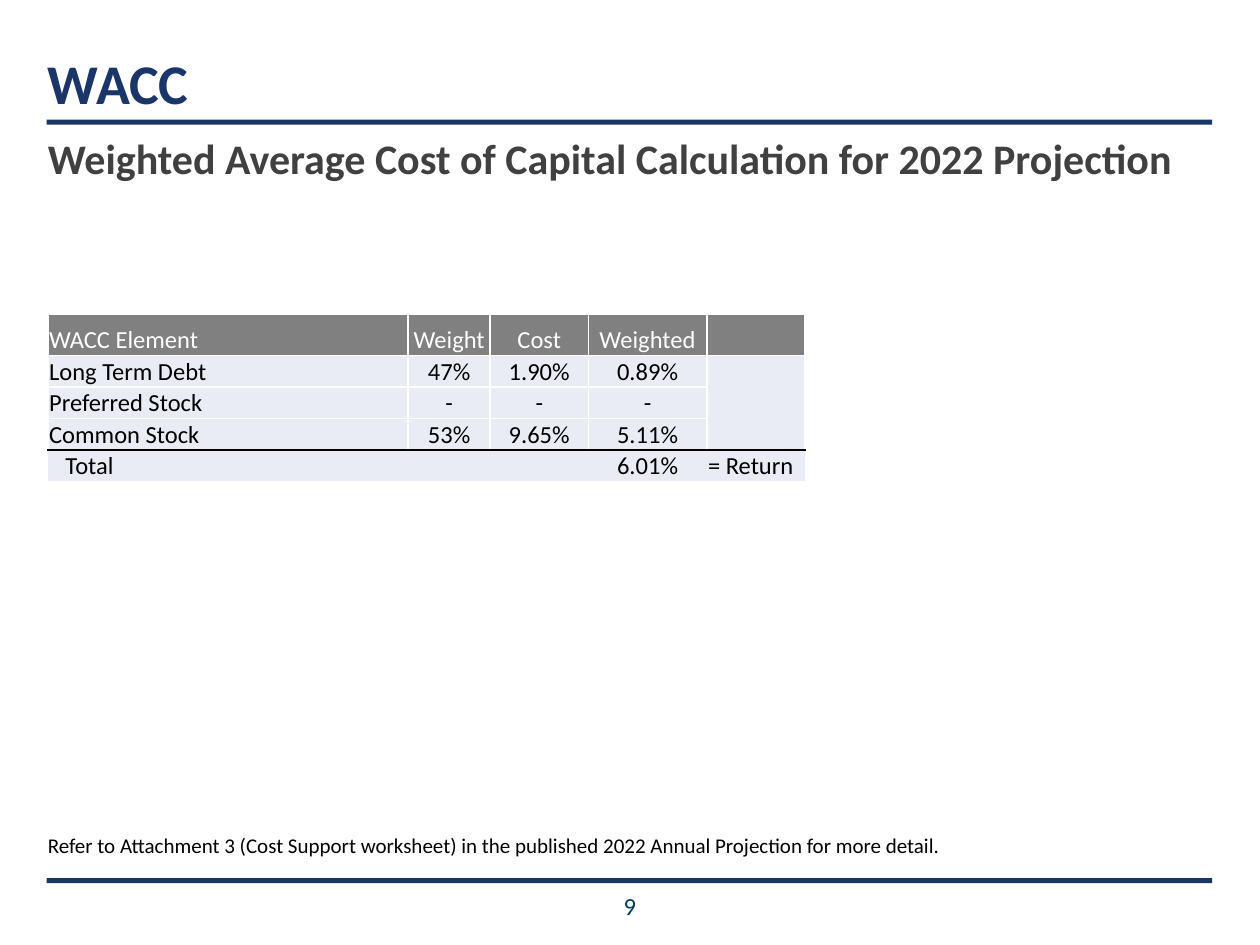
"""Build the WACC slide with its weighted average cost of capital table."""
from lxml import etree
from pptx import Presentation
from pptx import util as u
from pptx.dml.color import RGBColor
from pptx.enum import shapes, text
from pptx.oxml.ns import qn

NAVY, GREY, BLACK, WHITE = "1A3567", "808080", "000000", "FFFFFF"
LEFT, CENTER = text.PP_ALIGN.LEFT, text.PP_ALIGN.CENTER


def style(para, size, color, align=LEFT, bold=False):
    para.alignment = align
    for span in para.runs:
        span.font.name = "Calibri"
        span.font.size = u.Pt(size)
        span.font.bold = bold
        span.font.color.rgb = RGBColor.from_string(color)


def set_border(cell, side, color):
    line = etree.SubElement(cell._tc.get_or_add_tcPr(), qn(f"a:ln{side}"), w=str(u.Pt(1)))
    if color is None:
        etree.SubElement(line, qn("a:noFill"))
    else:
        fill = etree.SubElement(line, qn("a:solidFill"))
        etree.SubElement(fill, qn("a:srgbClr"), val=color)


deck = Presentation()
deck.slide_width, deck.slide_height = u.Inches(10), u.Inches(7.5)
page = deck.slides.add_slide(deck.slide_layouts[6])

for top in (0.95, 6.97):
    rule = page.shapes.add_shape(
        shapes.MSO_SHAPE.RECTANGLE, u.Inches(0.37), u.Inches(top), u.Inches(9.25), u.Inches(0.04))
    rule.shadow.inherit = False
    rule.fill.solid()
    rule.fill.fore_color.rgb = RGBColor.from_string(NAVY)
    rule.line.fill.background()

TOP, BOTTOM = text.MSO_ANCHOR.TOP, text.MSO_ANCHOR.BOTTOM
labels = [
    ("9", (0, 7.07, 10, 0.25), TOP, (14, "003B5C", CENTER)),
    ("WACC", (0.38, 0.22, 9.25, 0.7), BOTTOM, (32, NAVY, LEFT, True)),
    ("Weighted Average Cost of Capital Calculation for 2022 Projection",
     (0.38, 1.05, 9.25, 0.5), TOP, (24, "404040", text.PP_ALIGN.JUSTIFY, True)),
    ("Refer to Attachment 3 (Cost Support worksheet) in the published 2022 Annual "
     "Projection for more detail.", (0.38, 6.61, 9.04, 0.34), TOP, (12, BLACK)),
]
for words, place, anchor, look in labels:
    box = page.shapes.add_textbox(*map(u.Inches, place))
    frame = box.text_frame
    frame.word_wrap = True
    frame.vertical_anchor = anchor
    frame.margin_left = frame.margin_right = frame.margin_top = frame.margin_bottom = 0
    frame.text = words
    style(frame.paragraphs[0], *look)

rows = [
    ("WACC Element", "Weight", "Cost", "Weighted", ""),
    ("Long Term Debt", "47%", "1.90%", "0.89%", ""),
    ("Preferred Stock", "-", "-", "-", ""),
    ("Common Stock", "53%", "9.65%", "5.11%", ""),
    ("Total", "", "", "6.01%", "= Return"),
]
widths = [2.86, 0.65, 0.78, 0.94, 0.78]
heights = [0.33, 0.25, 0.25, 0.25, 0.24]
total, last = len(rows) - 1, len(widths) - 1
table = page.shapes.add_table(
    len(rows), len(widths), u.Inches(0.38), u.Inches(2.49),
    u.Inches(sum(widths)), u.Inches(sum(heights))).table
table.first_row = table.horz_banding = False
for column, width in zip(table.columns, widths):
    column.width = u.Inches(width)
for row, height in zip(table.rows, heights):
    row.height = u.Inches(height)

for r, values in enumerate(rows):
    edges = [WHITE, WHITE, None, None, BLACK, None]
    for c, value in enumerate(values):
        cell = table.cell(r, c)
        side_color = None if r == total else WHITE
        open_column = c == last
        above = None if open_column and r in (2, 3) else edges[r] or WHITE
        below = None if r == total or (open_column and r in (1, 2)) else edges[r + 1] or WHITE
        for side, color in zip("LRTB", (side_color, side_color, above, below)):
            set_border(cell, side, color)
        cell.fill.solid()
        cell.fill.fore_color.rgb = RGBColor.from_string(GREY if r == 0 else "E9EBF5")
        cell.vertical_anchor = BOTTOM
        cell.margin_left = u.Inches(0.14 if value == "Total" else 0.01)
        cell.margin_right = cell.margin_top = u.Inches(0.01)
        cell.margin_bottom = 0
        cell.text_frame.text = value
        para = cell.text_frame.paragraphs[0]
        style(para, 14, WHITE if r == 0 else BLACK, CENTER if 0 < c < last else LEFT)
        etree.SubElement(para._p, qn("a:endParaRPr"), sz="1400")

deck.save("out.pptx")
